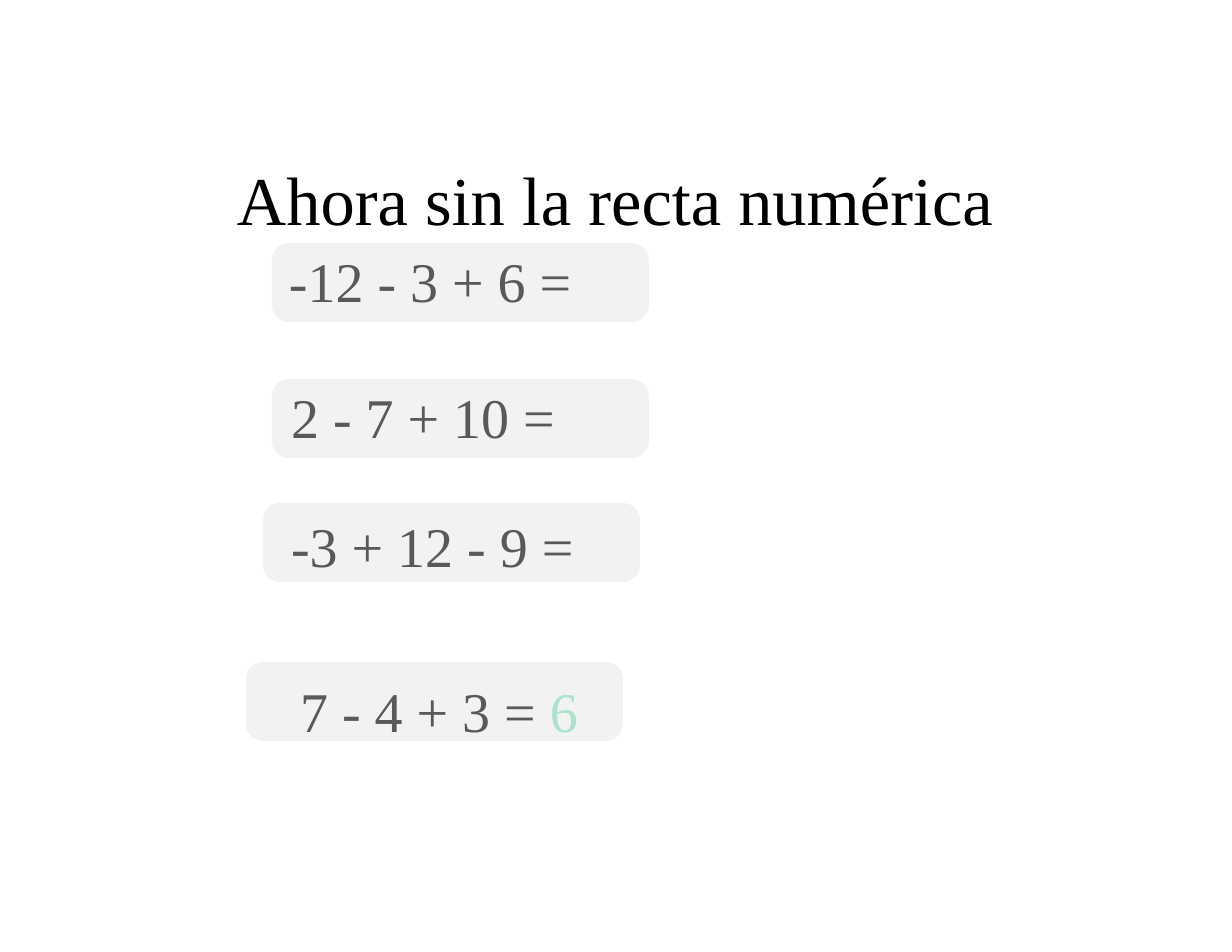
from pptx import Presentation
from pptx.dml.color import RGBColor
from pptx.enum.shapes import MSO_SHAPE
from pptx.util import Emu, Pt

PX = 914400 // 112
FONT = "Times New Roman"
BLACK = RGBColor(0x00, 0x00, 0x00)
GRAY = RGBColor(0x59, 0x59, 0x59)
LIGHT_GRAY = RGBColor(0xF2, 0xF2, 0xF2)
MINT = RGBColor(0xAA, 0xE2, 0xCA)

CARD_WIDTH, CARD_HEIGHT, CARD_RADIUS = 377, 79, 17
CARD_POSITIONS = [(272, 243), (272, 379), (263, 503), (246, 662)]


def px(length):
    return Emu(length * PX)


def add_card(slide, left, top):
    card = slide.shapes.add_shape(
        MSO_SHAPE.ROUNDED_RECTANGLE,
        px(left), px(top), px(CARD_WIDTH), px(CARD_HEIGHT))
    card.adjustments[0] = CARD_RADIUS / CARD_HEIGHT
    card.fill.solid()
    card.fill.fore_color.rgb = LIGHT_GRAY
    card.line.fill.background()
    card.shadow.inherit = False


def add_text(slide, left, top, width, height, inset_top, lines):
    box = slide.shapes.add_textbox(px(left), px(top), px(width), px(height))
    frame = box.text_frame
    frame.word_wrap = True
    frame.margin_left = frame.margin_right = frame.margin_bottom = 0
    frame.margin_top = px(inset_top)
    for index, (indent, space_before, size, runs) in enumerate(lines):
        paragraph = frame.add_paragraph() if index else frame.paragraphs[0]
        paragraph.space_before = Pt(space_before)
        properties = paragraph._p.get_or_add_pPr()
        properties.set("marL", str(px(indent)))
        properties.set("indent", "0")
        for text, color in runs:
            run = paragraph.add_run()
            run.text = text
            run.font.name = FONT
            run.font.size = Pt(size)
            run.font.color.rgb = color


def main():
    presentation = Presentation()
    presentation.slide_width = px(1232)
    presentation.slide_height = px(952)
    slide = presentation.slides.add_slide(presentation.slide_layouts[6])

    for left, top in CARD_POSITIONS:
        add_card(slide, left, top)

    add_text(slide, 236, 147, 759, 169, 10, [
        (1, 6.7, 44, [("Ahora sin la recta numérica", BLACK)]),
        (53, 4.7, 36, [("-12 - 3 + 6 =", GRAY)]),
    ])
    add_text(slide, 290, 381, 290, 353, 1, [
        (1, 3, 36, [("2 - 7 + 10 =", GRAY)]),
        (1, 40, 36, [("-3 + 12 - 9 =", GRAY)]),
        (10, 63, 36, [("7 - 4 + 3 = ", GRAY), ("6", MINT)]),
    ])
    presentation.save("out.pptx")


if __name__ == "__main__":
    main()
